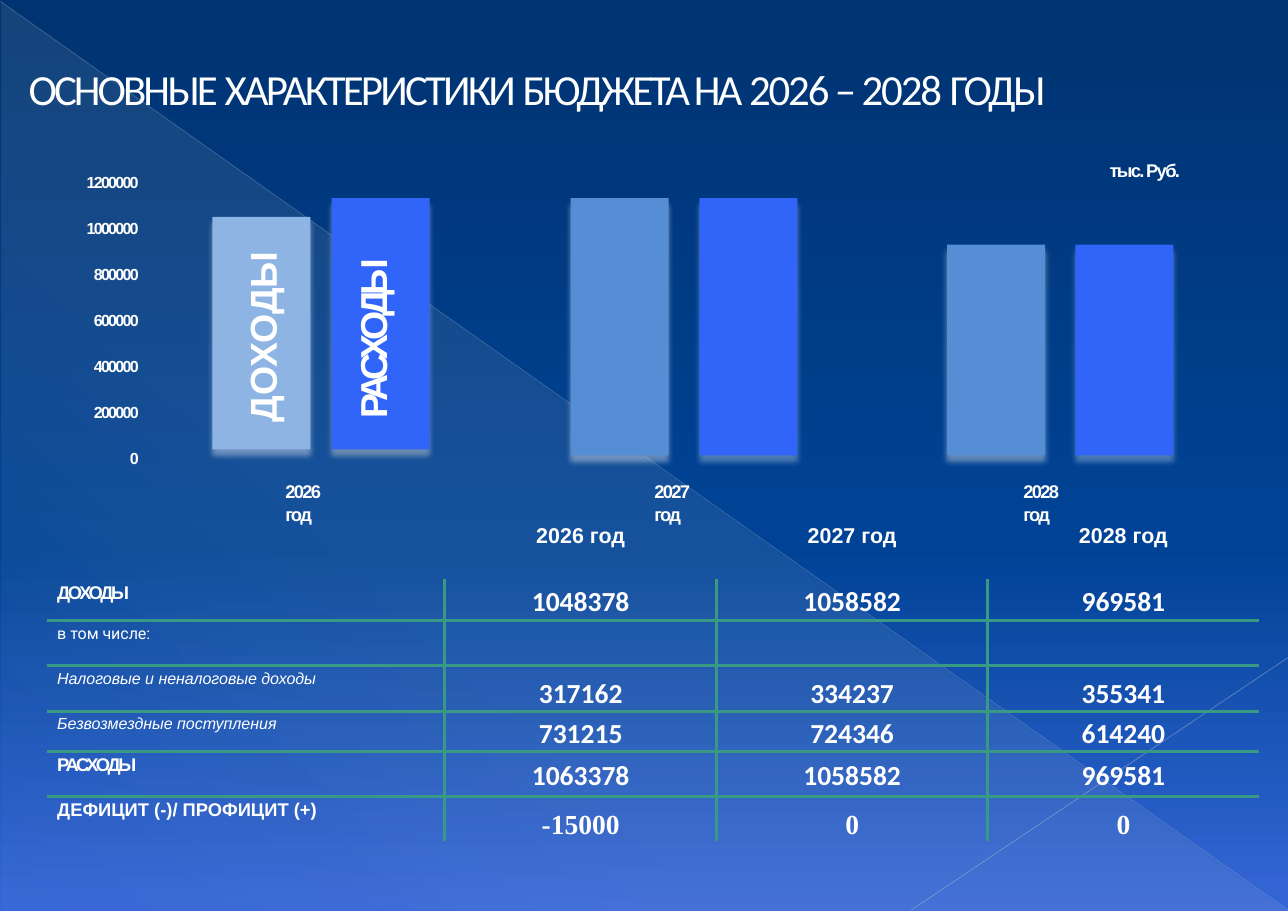
"""Budget slide: title, income and spending bars by year, and a table of figures."""
from lxml.etree import SubElement
from pptx import Presentation
from pptx.dml.color import RGBColor
from pptx.enum.shapes import MSO_CONNECTOR as Link, MSO_SHAPE as Form
from pptx.enum.text import MSO_ANCHOR as Anchor, MSO_AUTO_SIZE as Auto, PP_ALIGN as Align
from pptx.oxml import parse_xml
from pptx.oxml.ns import nsdecls, qn
from pptx.util import Cm, Pt

hue = RGBColor.from_string
years = ("2026 год", "2027 год", "2028 год")


def put(para, text, gap=0, **form):
    """Add a white run with letter spacing in points."""
    run = para.add_run()
    run.text = text
    run.font.color.rgb = hue("FFFFFF")
    for key, val in form.items():
        setattr(run.font, key, val)
    if gap:
        run.font._element.set("spc", str(round(gap * 100)))


def box(x, y, wide, high):
    """Add a text box without margins and return its frame."""
    frame = deck.shapes.add_textbox(Cm(x), Cm(y), Cm(wide), Cm(high)).text_frame
    for key, val in bare.items():
        setattr(frame, key, val)
    return frame


bare = {"margin_left": 0, "margin_right": 0, "margin_top": 0, "margin_bottom": 0,
        "word_wrap": True, "auto_size": Auto.NONE, "vertical_anchor": Anchor.TOP}
bold = {"name": "Arial", "bold": True}

show = Presentation()
show.slide_width, show.slide_height = Cm(29.7), Cm(21)
deck = show.slides.add_slide(show.slide_layouts[5])

# Backdrop
deck.background.fill.solid()
back = deck.element.find(".//" + qn("p:bgPr"))
wedge = deck.shapes.add_shape(Form.RIGHT_TRIANGLE, Cm(0.03), Cm(0.05), Cm(29.67), Cm(20.95))
wedge.shadow.inherit = False
wedge.line.fill.background()
wedge.fill.solid()
for node, stops, turn in (
    (back, ((0, "003371", 100), (60, "004396", 100), (100, "3566D7", 100)), 90),
    (wedge.element.spPr, ((0, "EEECE1", 10), (70, "EEECE1", 8), (100, "EEECE1", 1)), 133),
):
    marks = "".join(
        f'<a:gs pos="{pos * 1000}"><a:srgbClr val="{tone}"><a:alpha val="{part * 1000}"/>'
        "</a:srgbClr></a:gs>" for pos, tone, part in stops)
    node.replace(node.find(qn("a:solidFill")), parse_xml(
        f'<a:gradFill {nsdecls("a")} rotWithShape="1"><a:gsLst>{marks}</a:gsLst>'
        f'<a:lin ang="{turn * 60000}" scaled="0"/></a:gradFill>'))

for x, y, right, low, tone, wide, part in (
    (0, 0.03, 29.7, 20.98, "ADB6CE", 0.39, 35),
    (29.7, 15.16, 21.01, 20.98, "B6BED3", 0.47, 45),
):
    ray = deck.shapes.add_connector(Link.STRAIGHT, Cm(x), Cm(y), Cm(right), Cm(low))
    ray.line.width = Pt(wide)
    ray.line.color.rgb = hue(tone)
    ink = ray.element.spPr.find(".//" + qn("a:srgbClr"))
    SubElement(ink, qn("a:alpha")).set("val", str(part * 1000))
    SubElement(ray.element.spPr, qn("a:effectLst"))

# Title
title = deck.shapes.title
title.element.getparent().append(title.element)
title.left, title.top, title.width, title.height = Cm(0.66), Cm(1.4), Cm(27), Cm(1.3)
for key, val in bare.items():
    setattr(title.text_frame, key, val)
title.text_frame.margin_top = Cm(0.05)
head = title.text_frame.paragraphs[0]
head.alignment = Align.LEFT
head.space_before = Pt(1.3)
for text, gap in (("ОСНОВНЫЕ ", -1.9), ("ХАРАКТЕРИСТИКИ ", -1.8), ("БЮДЖЕТА НА ", -1.9),
                  ("2026 – 2028 ", -1.4), ("ГОДЫ", -1.8)):
    put(head, text, gap, name="Calibri", size=Pt(28))

# Bars
for x, y, low, tone, glow in (
    (4.9, 5, 10.36, "8EB4E3", "FFFFFF"), (7.65, 4.57, 10.36, "3165F9", "EEECE1"),
    (13.16, 4.57, 10.5, "558ED5", "FFFFFF"), (16.13, 4.57, 10.5, "3165F9", "C6D9F1"),
    (21.84, 5.64, 10.5, "558ED5", "FFFFFF"), (24.8, 5.64, 10.5, "3165F9", "C6D9F1"),
):
    bar = deck.shapes.add_shape(Form.RECTANGLE, Cm(x), Cm(y), Cm(2.26), Cm(low - y))
    bar.fill.solid()
    bar.fill.fore_color.rgb = hue(tone)
    bar.line.fill.background()
    bar.element.spPr.append(parse_xml(
        f'<a:effectLst {nsdecls("a")}><a:outerShdw blurRad="{Pt(4)}" dist="{Pt(4)}" '
        f'dir="5400000" rotWithShape="0"><a:srgbClr val="{glow}"><a:alpha val="38000"/>'
        "</a:srgbClr></a:outerShdw></a:effectLst>"))

scale = box(1.73, 3.98, 1.47, 6.8)
for step in range(6, -1, -1):
    para = scale.paragraphs[0] if step == 6 else scale.add_paragraph()
    para.alignment = Align.RIGHT
    para.space_after = Pt(17.5)
    put(para, str(step * 200000), -1.1, size=Pt(10.5), **bold)

for spot, year in enumerate(years):
    para = box(6.58 + spot * 8.51, 11.08, 1.3, 1.1).paragraphs[0]
    put(para, year, -1.1, size=Pt(12), **bold)

for x, y, high, text, gap in ((5.54, 4.8, 4.93, "ДОХОДЫ", 0), (8.08, 4.57, 5.08, "РАСХОДЫ", -3.2)):
    frame = box(x, y, 1.04, high)
    frame._txBody.bodyPr.set("vert", "vert270")
    frame.paragraphs[0].line_spacing = Pt(28.9)
    put(frame.paragraphs[0], text, gap, size=Pt(24.5), **bold)

unit = box(25.2, 3.66, 2.4, 0.56).paragraphs[0]
unit.alignment = Align.CENTER
put(unit, "тыс. Руб.", -1.1, size=Pt(12), **bold)

# Table
caps = {"size": Pt(12), **bold}
plain = {"size": Pt(10.5), "name": "Roboto", "bold": False}
slant = {"size": Pt(10.5), "name": "Arial", "bold": False, "italic": True}
sums = {"size": Pt(18), "name": "Calibri", "bold": True}
serif = {**sums, "name": "Times New Roman"}
top, mid, low = Anchor.TOP, Anchor.MIDDLE, Anchor.BOTTOM
rows = (
    (1.78, "", *years, caps, 0, {"size": Pt(14), **bold}, top),
    (0.97, "ДОХОДЫ", "1048378", "1058582", "969581", caps, -1.5, sums, mid),
    (1.04, "в том числе:", "", "", "", plain, 0, sums, mid),
    (1.04, "Налоговые и неналоговые доходы", "317162", "334237", "355341", slant, 0, sums, low),
    (0.93, "Безвозмездные поступления", "731215", "724346", "614240", slant, 0, sums, mid),
    (1.03, "РАСХОДЫ", "1063378", "1058582", "969581", caps, -1.5, sums, mid),
    (1.03, "ДЕФИЦИТ (-)/ ПРОФИЦИТ (+)", "-15000", "0", "0", caps, 0, serif, low),
)
grid = deck.shapes.add_table(7, 4, Cm(1.09), Cm(11.56), Cm(27.94), Cm(7.82)).table
grid.first_row = grid.horz_banding = False
grid._tbl.tblPr.find(qn("a:tableStyleId")).text = "{2D5ABB26-0587-4C30-8999-92F81FD0307C}"
for col, wide in enumerate((9.17, 6.26, 6.26, 6.25)):
    grid.columns[col].width = Cm(wide)
for row, (high, *texts, label, gap, value, hold) in enumerate(rows):
    grid.rows[row].height = Cm(high)
    for col, text in enumerate(texts):
        cell = grid.cell(row, col)
        para = cell.text_frame.paragraphs[0]
        form = {"margin_left": Cm(0 if col else 0.23), "margin_right": 0, "margin_bottom": 0,
                "margin_top": Cm(0 if row and col else 0.09 if row else 0.53),
                "vertical_anchor": hold if col else top}
        for key, val in form.items():
            setattr(cell, key, val)
        if col:
            para.alignment = Align.CENTER
            para.line_spacing = 1.15 if hold == mid else 1.0
        if text:
            put(para, text, 0 if col else gap, **(value if col else label))
        cell.fill.background()
        sides = {"L": row and col, "R": row and col < 3, "T": row > 1, "B": 0 < row < 6}
        edges = [side for side, on in sides.items() if on]
        for spot, side in enumerate(edges):
            cell._tc.tcPr.insert(spot, parse_xml(
                f'<a:ln{side} {nsdecls("a")} w="{Pt(2.25)}"><a:solidFill>'
                f'<a:srgbClr val="389985"/></a:solidFill></a:ln{side}>'))

show.save("out.pptx")
